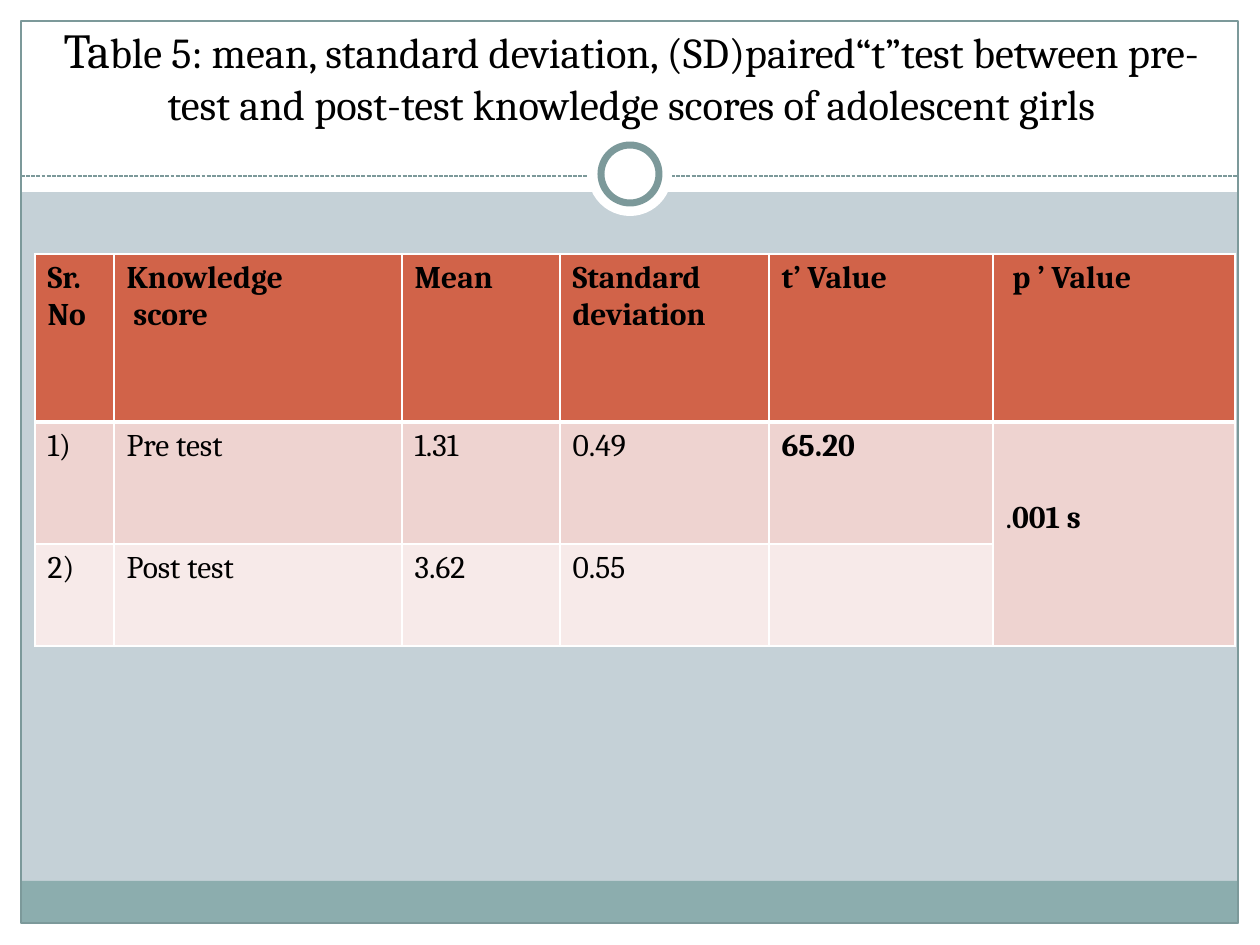
from lxml import etree
from pptx import Presentation
from pptx.dml.color import RGBColor as RGB
from pptx.enum.dml import MSO_LINE as DASH
from pptx.enum.shapes import MSO_CONNECTOR as CONNECTOR, MSO_SHAPE as SHAPE
from pptx.enum.text import MSO_ANCHOR as ANCHOR, PP_ALIGN as ALIGN
from pptx.oxml.ns import qn
from pptx.util import Pt

PX = 914400 // 126
COLORS = {
    "white": "FFFFFF", "backdrop": "C5D1D7", "footer": "8CADAE",
    "frame": "7C999A", "header": "D16349", "odd": "EED3D0",
    "even": "F7EAE9", "ink": "000000",
}


def color(name):
    return RGB.from_string(COLORS[name])


def write(paragraph, text, size, bold):
    run = paragraph.add_run()
    run.text = text
    for key, value in {"name": "Cambria", "size": Pt(size), "bold": bold}.items():
        setattr(run.font, key, value)
    run.font.color.rgb = color("ink")


prs = Presentation()
prs.slide_width, prs.slide_height = 1260 * PX, 945 * PX
slide = prs.slides.add_slide(prs.slide_layouts[5])
slide.background.fill.solid()
slide.background.fill.fore_color.rgb = color("backdrop")
shapes = slide.shapes

decor = [
    (SHAPE.RECTANGLE, 0, 924, 1260, 21, "white", 0),
    (SHAPE.RECTANGLE, 0, 0, 1260, 192, "white", 0),
    (SHAPE.RECTANGLE, 0, 0, 21, 945, "white", 0),
    (SHAPE.RECTANGLE, 1239, 0, 21, 945, "white", 0),
    (SHAPE.RECTANGLE, 21, 881, 1217, 43, "footer", 0),
    (SHAPE.RECTANGLE, 21, 21, 1217, 902, None, 0.75),
    (None, 21, 176, 1217, 0, None, 0.75),
    (SHAPE.OVAL, 588, 132, 84, 84, "white", 0),
    (SHAPE.OVAL, 601, 145, 58, 58, "white", 4),
]
for preset, x, y, w, h, fill, weight in decor:
    if preset is None:
        part = shapes.add_connector(
            CONNECTOR.STRAIGHT, x * PX, y * PX, (x + w) * PX, (y + h) * PX)
        part.line.dash_style = DASH.SQUARE_DOT
        etree.SubElement(part.line._get_or_add_ln().getparent(), qn("a:effectLst"))
    else:
        part = shapes.add_shape(preset, x * PX, y * PX, w * PX, h * PX)
        part.shadow.inherit = False
        if fill:
            part.fill.solid()
            part.fill.fore_color.rgb = color(fill)
        else:
            part.fill.background()
    if weight:
        part.line.color.rgb = color("frame")
        part.line.width = Pt(weight)
    else:
        part.line.fill.background()

title = shapes.title
shapes._spTree.append(title._element)
for key, value in {"left": 35, "top": 0, "width": 1193, "height": 185}.items():
    setattr(title, key, value * PX)
heading = title.text_frame
for key, value in {"word_wrap": True, "vertical_anchor": ANCHOR.BOTTOM,
                   "margin_top": 0, "margin_bottom": 56 * PX}.items():
    setattr(heading, key, value)
heading.paragraphs[0].alignment = ALIGN.CENTER
write(heading.paragraphs[0], "Ta", 27.9, False)
write(heading.paragraphs[0],
      "ble 5: mean, standard deviation, (SD)paired“t”test between "
      "pre-test and post-test knowledge scores of adolescent girls", 24.3, False)

scores = [
    ["Sr.No", "Knowledge\n score", "Mean", "Standard\ndeviation", "t’ Value", " p ’ Value"],
    ["1)", "Pre test", "1.31", "0.49", "65.20", ".001 s"],
    ["2)", "Post test", "3.62", "0.55", "", ""],
]
col_widths = [79, 288, 158, 209, 224, 242]
row_heights = [168, 122, 102]
row_fills = ["header", "odd", "even"]
table = shapes.add_table(3, 6, 35 * PX, 254 * PX,
                         sum(col_widths) * PX, sum(row_heights) * PX).table
for column, width in zip(table.columns, col_widths):
    column.width = width * PX
for row, height in zip(table.rows, row_heights):
    row.height = height * PX
p_value = table.cell(1, 5)
p_value.merge(table.cell(2, 5))

for r, row in enumerate(scores):
    for c, text in enumerate(row):
        cell = table.cell(r, c)
        bold = r == 0 or c >= 4
        lines = text.split("\n") if text else []
        for i, line in enumerate(lines):
            frame = cell.text_frame
            paragraph = frame.add_paragraph() if i else frame.paragraphs[0]
            if line.startswith("."):
                write(paragraph, ".", 18, False)
                line = line[1:]
            write(paragraph, line, 18, bold)
        props = cell._tc.get_or_add_tcPr()
        for side in ("L", "R", "T", "B"):
            thick = (r, side) in ((0, "B"), (1, "T"))
            border = etree.SubElement(props, qn(f"a:ln{side}"), w=str(Pt(3 if thick else 1)))
            paint = etree.SubElement(border, qn("a:solidFill"))
            etree.SubElement(paint, qn("a:srgbClr"), val=COLORS["white"])
        cell.fill.solid()
        cell.fill.fore_color.rgb = color(row_fills[r])
p_value.margin_top = 78 * PX

prs.save("out.pptx")
